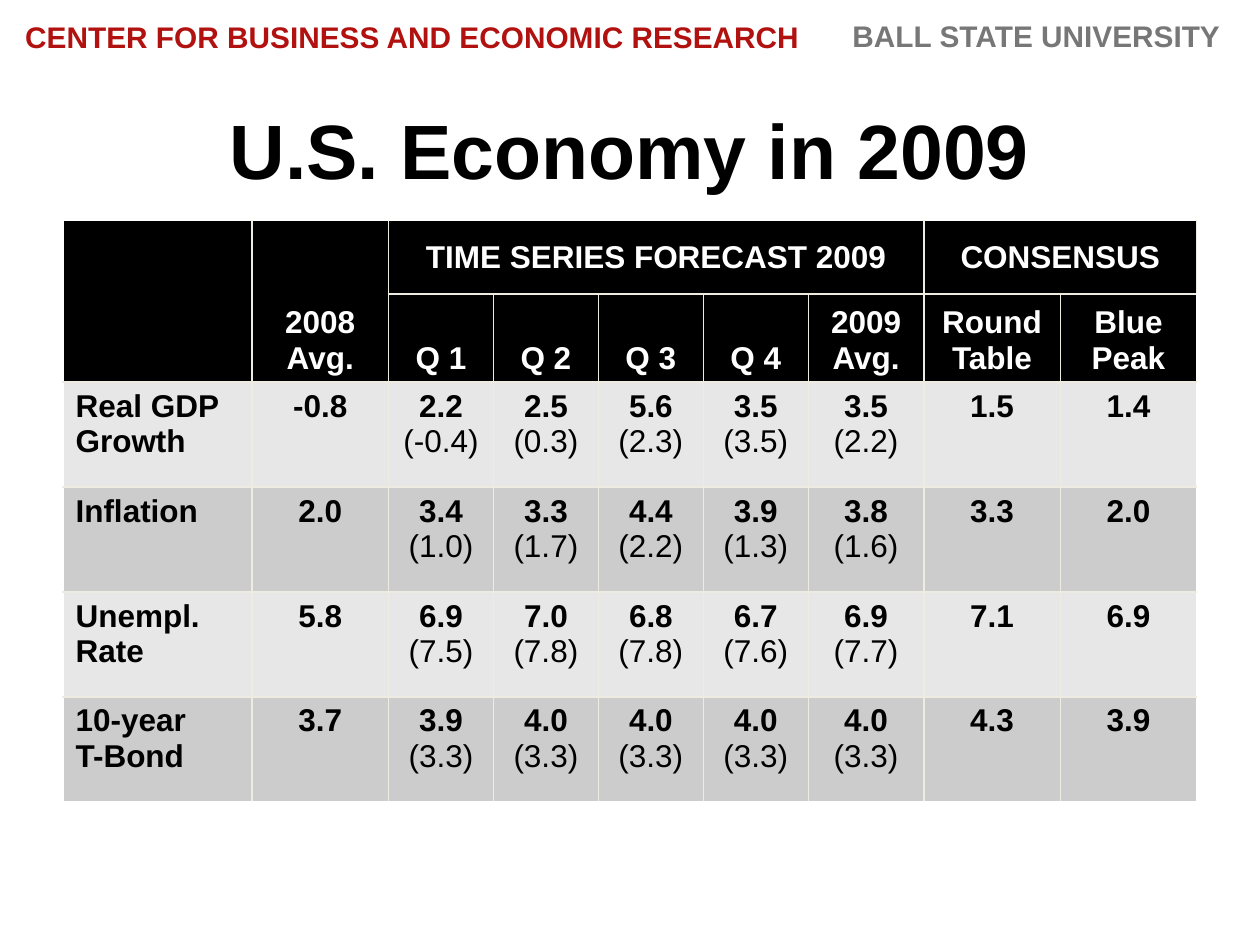
import lxml.etree
import pptx
import pptx.dml.color
import pptx.enum.shapes
import pptx.enum.text
import pptx.oxml.ns
import pptx.util

PX = 7620
FONT = "Arial"
BLACK = pptx.dml.color.RGBColor(0x00, 0x00, 0x00)
WHITE = pptx.dml.color.RGBColor(0xFF, 0xFF, 0xFF)
RED = pptx.dml.color.RGBColor(0xB1, 0x11, 0x0F)
GRAY = pptx.dml.color.RGBColor(0x77, 0x77, 0x77)
CREAM = pptx.dml.color.RGBColor(0xEE, 0xEC, 0xE1)
BANDS = (
    pptx.dml.color.RGBColor(0xE7, 0xE7, 0xE7),
    pptx.dml.color.RGBColor(0xCC, 0xCC, 0xCC),
)

CENTER = pptx.enum.text.PP_ALIGN.CENTER
LEFT = pptx.enum.text.PP_ALIGN.LEFT
TOP = pptx.enum.text.MSO_ANCHOR.TOP
MIDDLE = pptx.enum.text.MSO_ANCHOR.MIDDLE
BOTTOM = pptx.enum.text.MSO_ANCHOR.BOTTOM

COLUMN_WIDTHS = [180, 130, 100, 100, 100, 100, 110, 130, 130]
ROW_HEIGHTS = [70, 72, 100, 100, 100, 100]
ROWS = [
    ["", "2008\vAvg.", "TIME SERIES FORECAST 2009", "", "", "", "", "CONSENSUS", ""],
    ["", "", "Q 1", "Q 2", "Q 3", "Q 4", "2009 Avg.", "Round Table", "Blue Peak"],
    ["Real GDP Growth", "-0.8", "2.2\n(-0.4)", "2.5\n(0.3)", "5.6\n(2.3)",
     "3.5\n(3.5)", "3.5\n(2.2)", "1.5", "1.4"],
    ["Inflation", "2.0", "3.4\n(1.0)", "3.3\n(1.7)", "4.4\n(2.2)",
     "3.9\n(1.3)", "3.8\n(1.6)", "3.3", "2.0"],
    ["Unempl.\nRate", "5.8", "6.9\n(7.5)", "7.0\n(7.8)", "6.8\n(7.8)",
     "6.7\n(7.6)", "6.9\n(7.7)", "7.1", "6.9"],
    ["10-year\nT-Bond", "3.7", "3.9\n(3.3)", "4.0\n(3.3)", "4.0\n(3.3)",
     "4.0\n(3.3)", "4.0\n(3.3)", "4.3", "3.9"],
]
MERGES = [((0, 0), (1, 0)), ((0, 1), (1, 1)), ((0, 2), (0, 6)), ((0, 7), (0, 8))]


def scale(*lengths):
    return [pptx.util.Emu(length * PX) for length in lengths]


def format_text(text_frame, size, color, alignment):
    for paragraph in text_frame.paragraphs:
        paragraph.alignment = alignment
        for run in paragraph.runs:
            run.font.name = FONT
            run.font.size = pptx.util.Pt(size)
            run.font.bold = not run.text.startswith("(")
            run.font.color.rgb = color


def add_label(slide, box, text, color, anchor, left_inset, right_inset):
    label = slide.shapes.add_textbox(*scale(*box))
    text_frame = label.text_frame
    text_frame.word_wrap = True
    text_frame.vertical_anchor = anchor
    text_frame.margin_left, text_frame.margin_right = scale(left_inset, right_inset)
    text_frame.margin_top, text_frame.margin_bottom = scale(18, 18)
    text_frame.text = text
    format_text(text_frame, 17, color, LEFT)


def add_banner(slide, box):
    left, top, width, height = box
    band = slide.shapes.add_shape(
        pptx.enum.shapes.MSO_SHAPE.RECTANGLE, *scale(*box))
    band.shadow.inherit = False
    band.fill.solid()
    band.fill.fore_color.rgb = WHITE
    band.line.fill.background()
    add_label(slide, (left, top, 810, height),
              "CENTER FOR BUSINESS AND ECONOMIC RESEARCH", RED, MIDDLE, 24, 12)
    add_label(slide, (left + 800, top, width - 800, height),
              "BALL STATE UNIVERSITY", GRAY, TOP, 12, 24)


def add_title(slide, box):
    title = slide.shapes.title
    title.left, title.top, title.width, title.height = scale(*box)
    title.text_frame.text = "U.S. Economy in 2009"
    title.text_frame.vertical_anchor = MIDDLE
    format_text(title.text_frame, 44, BLACK, CENTER)


def set_borders(cell, colors):
    properties = cell._tc.get_or_add_tcPr()
    for index, (side, color) in enumerate(zip("LRTB", colors)):
        line = lxml.etree.Element(
            pptx.oxml.ns.qn(f"a:ln{side}"), w=str(pptx.util.Pt(1)))
        fill = lxml.etree.SubElement(line, pptx.oxml.ns.qn("a:solidFill"))
        lxml.etree.SubElement(fill, pptx.oxml.ns.qn("a:srgbClr"), val=str(color))
        properties.insert(index, line)


def format_cell(cell, row, column):
    is_header = row < 2
    cell.fill.solid()
    cell.fill.fore_color.rgb = BLACK if is_header else BANDS[row % 2]
    if row == 0 and column > 1:
        cell.vertical_anchor = MIDDLE
    else:
        cell.vertical_anchor = BOTTOM if is_header else TOP
    format_text(cell.text_frame, 18, WHITE if is_header else BLACK,
                CENTER if column else LEFT)
    on_edge = (column == 0, column == len(COLUMN_WIDTHS) - 1,
               row == 0, row == len(ROWS) - 1)
    set_borders(cell, [WHITE if edge else CREAM for edge in on_edge])


def add_forecast_table(slide, left, top):
    frame = slide.shapes.add_table(
        len(ROWS), len(COLUMN_WIDTHS),
        *scale(left, top, sum(COLUMN_WIDTHS), sum(ROW_HEIGHTS)))
    table = frame.table
    for column, width in zip(table.columns, scale(*COLUMN_WIDTHS)):
        column.width = width
    for row, height in zip(table.rows, scale(*ROW_HEIGHTS)):
        row.height = height
    for first, last in MERGES:
        table.cell(*first).merge(table.cell(*last))
    for row, texts in enumerate(ROWS):
        for column, text in enumerate(texts):
            cell = table.cell(row, column)
            cell.text_frame.text = text
            format_cell(cell, row, column)


def main():
    presentation = pptx.Presentation()
    presentation.slide_width, presentation.slide_height = scale(1200, 900)
    slide = presentation.slides.add_slide(presentation.slide_layouts[5])
    add_banner(slide, (0, 0, 1200, 70))
    add_title(slide, (60, 84, 1080, 116))
    add_forecast_table(slide, 60, 210)
    presentation.save("out.pptx")


if __name__ == "__main__":
    main()
